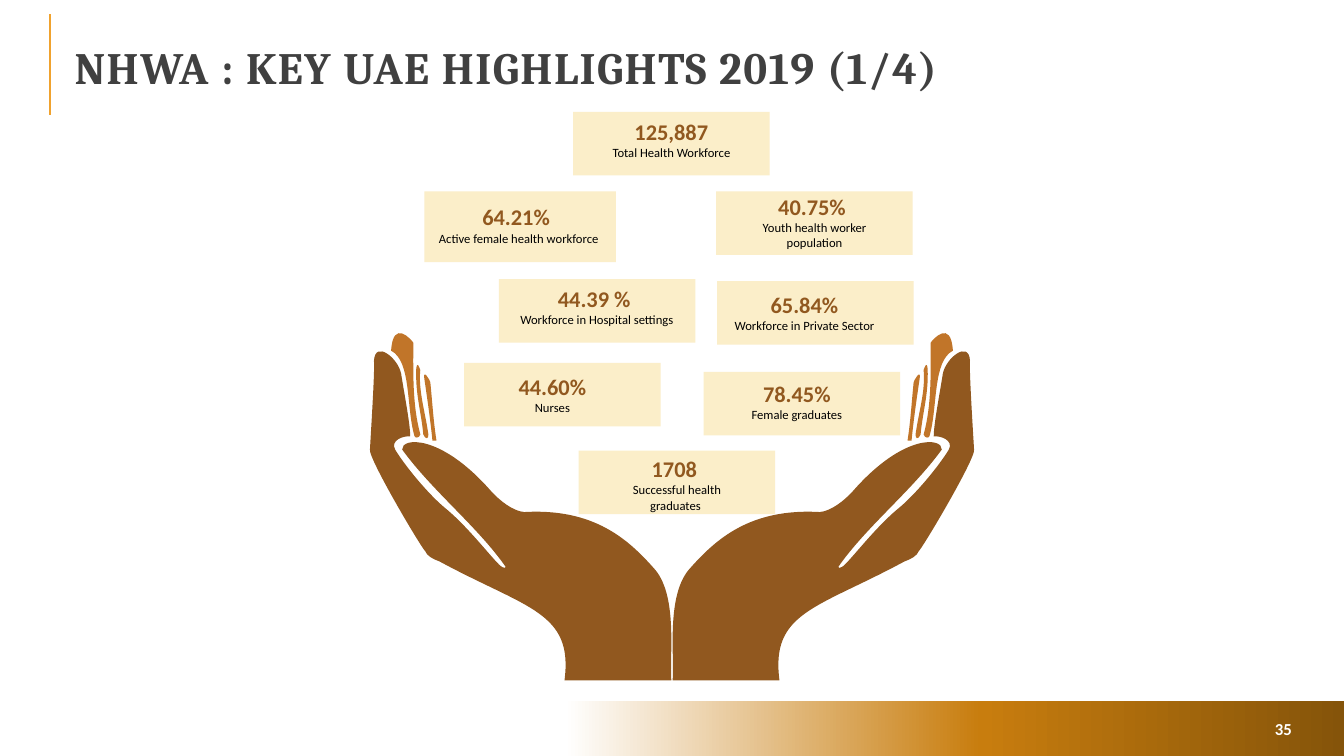
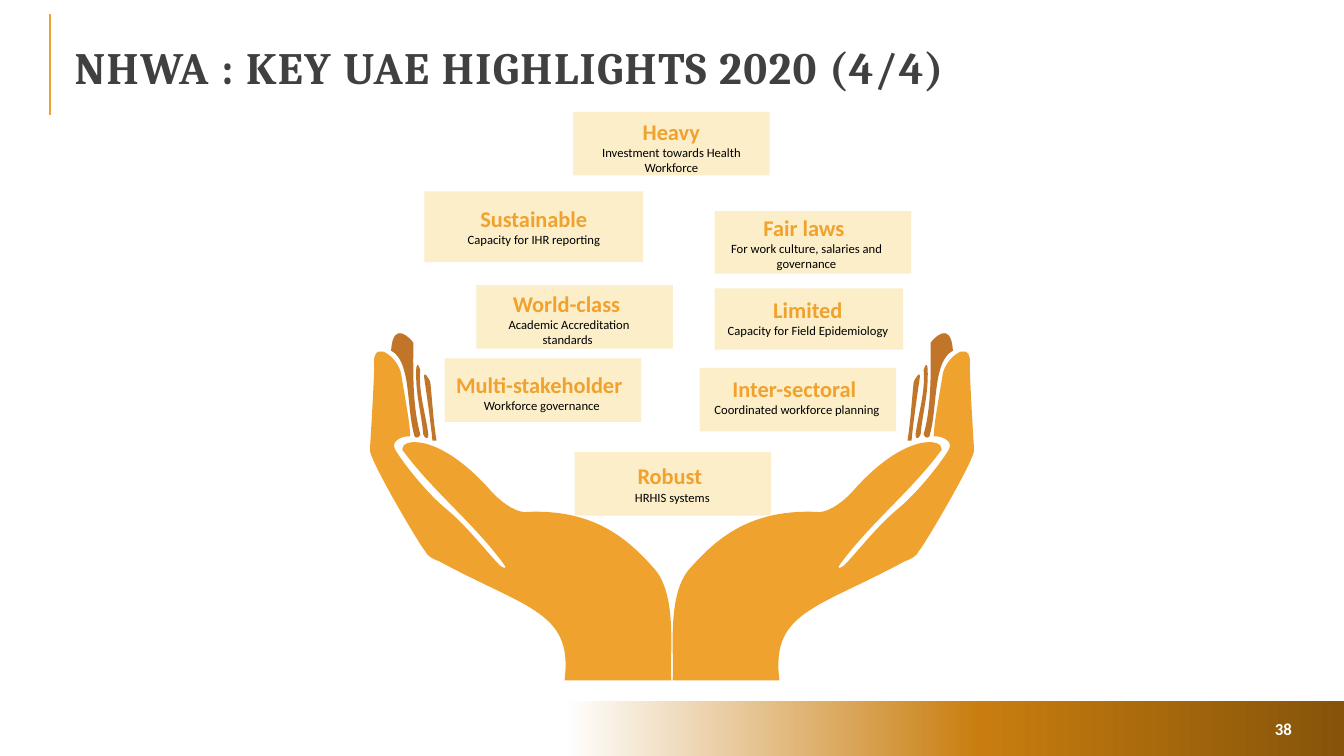
from copy import deepcopy
from dataclasses import dataclass

from lxml import etree
from pptx import Presentation
from pptx.dml.color import RGBColor
from pptx.enum.shapes import MSO_CONNECTOR, MSO_SHAPE
from pptx.enum.text import MSO_ANCHOR, MSO_AUTO_SIZE, PP_ALIGN
from pptx.oxml.ns import qn
from pptx.util import Emu, Inches, Pt

STRAIGHT = MSO_CONNECTOR.STRAIGHT
RECTANGLE = MSO_SHAPE.RECTANGLE
MIDDLE = MSO_ANCHOR.MIDDLE
TOP = MSO_ANCHOR.TOP
NO_AUTOFIT = MSO_AUTO_SIZE.NONE
LEFT, CENTER, RIGHT = PP_ALIGN.LEFT, PP_ALIGN.CENTER, PP_ALIGN.RIGHT

# The grid has square cells of a tenth of an inch
CELL = Inches(0.1)
COLUMNS, ROWS = 133.33, 75
MIRROR_AXIS = COLUMNS / 2
CURVE_STEPS = 16
TITLE_ONLY = 5

HEAD_FONT, BODY_FONT = "Cambria", "Calibri"
COLORS = {
    "amber": "F0A22E",
    "brown": "91581F",
    "finger": "C17529",
    "panel": "FBEEC9",
    "title": "404040",
    "black": "000000",
    "white": "FFFFFF",
    "band_middle": "C87D0E",
    "band_end": "85540A",
}
BAND_STOPS = [(0.42, "white"), (0.73, "band_middle"), (1.0, "band_end")]


@dataclass(frozen=True)
class Box:
    left: float
    top: float
    width: float
    height: float

    def emu(self) -> tuple:
        return tuple(cells(n) for n in (self.left, self.top, self.width, self.height))


@dataclass(frozen=True)
class Outline:
    """A start point, then curves (three points) and straight lines (one)."""
    start: tuple
    segments: list


@dataclass(frozen=True)
class Callout:
    value: str
    caption: str
    panel: Box
    text: Box


@dataclass(frozen=True)
class Page:
    title: str
    number: str
    accent: str
    callouts: list


TITLE_BOX = Box(6.4, 4.75, 106.3, 4.8)
NUMBER_BOX = Box(118.55, 70.8, 10.6, 3)
BAND_BOX = Box(0, 69.5, COLUMNS, 5.6)

# Left hand; the right one is its mirror image
PALM = Outline((42.2, 54.7), [
    ((41.7, 54.2), (36.5, 45.4), (36.7, 44.6)),
    ((36.8, 42.8), (37.2, 36.6), (37.1, 35.8)),
    ((37.2, 33.7), (39.5, 35.5), (39.8, 37.1)),
    ((40, 38.5), (40.7, 42), (40.7, 43.3)),
    ((40, 43.2), (38.7, 43.7), (39.2, 44.6)),
    ((40.1, 46.1), (42.5, 49.1), (44.4, 50.6)),
    ((46.5, 52.4), (48.5, 55), (49.5, 56)),
    ((50, 56.5), (50.4, 56.4), (50, 56)),
    ((47.2, 52.1), (42.8, 48.6), (39.9, 44.6)),
    ((39.8, 43.4), (43.7, 43), (48.7, 48.7)),
    ((49.6, 49.7), (50.9, 50.7), (52, 50.8)),
    ((58.9, 50.4), (62.3, 53.5), (64.8, 56.3)),
    ((67.3, 58.9), (66.4, 65), (66.6, 67.5)),
    ((56, 67.5),),
    ((56.9, 60.7), (52.3, 60.4), (43.6, 55.7)),
    ((43, 55.5), (42.3, 55.1), (42.2, 54.7)),
])
FINGERS = [
    Outline((38.8, 34.8), [
        ((39, 31.6), (40.8, 33.7), (41, 34)),
        ((41, 37), (40.9, 40.2), (41.7, 43.1)),
        ((41.6, 43.5), (41.1, 43.5), (41.1, 43.2)),
        ((40.3, 40.4), (40.8, 35.8), (38.8, 34.8)),
    ]),
    Outline((41.3, 36.6), [
        ((41.4, 35.7), (41.6, 36.5), (41.7, 36.7)),
        ((41.5, 38.8), (42.2, 40.9), (42.5, 43.1)),
        ((42.5, 43.5), (42.3, 43.7), (42, 43.1)),
        ((41.8, 40.9), (41.2, 39.1), (41.3, 36.6)),
    ]),
    Outline((42.1, 37.6), [
        ((41.9, 36.5), (42.7, 37.7), (42.7, 38)),
        ((42.9, 40), (43, 41.8), (43.3, 43.7)),
        ((42.9, 43.7),),
        ((42.7, 41.7), (42.4, 39.6), (42.1, 37.6)),
    ]),
]


def panel_at(left: float, top: float, width: float = 19.5, height: float = 6.3) -> Box:
    return Box(left, top, width, height)


def text_at(left: float, top: float, width: float = 17.2, height: float = 5.2) -> Box:
    return Box(left, top, width, height)


PAGES = [
    Page("NHWA : KEY UAE HIGHLIGHTS 2019 (1/4)", "35", "brown", [
        Callout("125,887", "Total Health Workforce", panel_at(56.85, 11.1), text_at(58, 11.2)),
        Callout("64.21% ", "Active female health workforce",
                panel_at(42.1, 19, 19, 7), text_at(41.7, 19.7, 19.5)),
        Callout("40.75% ", "Youth health worker population",
                panel_at(71.05, 19), text_at(72.2, 18.65, height=6.7)),
        Callout("44.39 % ", "Workforce in Hospital settings",
                panel_at(49.5, 27.7), text_at(50.6, 27.8, height=6.7)),
        Callout("65.84%", "Workforce in Private Sector",
                panel_at(71.15, 27.9), text_at(71.2, 28.4)),
        Callout("44.60%", "Nurses", panel_at(46.05, 36), text_at(47, 36.5, 15.6)),
        Callout("78.45%", "Female graduates",
                panel_at(69.8, 36.9), text_at(65.8, 37.25, 26.5, 5.6)),
        Callout("1708 ", "Successful health graduates ",
                panel_at(57.4, 44.7), text_at(60.8, 44.7, 12.7, 6.7)),
    ]),
    Page("NHWA : KEY UAE HIGHLIGHTS 2020 (4/4)", "38", "amber", [
        Callout("Heavy", "Investment towards Health Workforce",
                panel_at(56.85, 11.1), text_at(58, 11.2, height=6.7)),
        Callout("Sustainable", "Capacity for IHR reporting",
                panel_at(42.1, 19, 21.7, 7), text_at(44.35, 19.85)),
        Callout("Fair laws ", "For work culture, salaries and governance",
                panel_at(70.9, 20.95, 19.5, 6.2), text_at(71.4, 20.75, height=8.6)),
        Callout("World-class ", "Academic Accreditation standards ",
                panel_at(47.25, 28.3), text_at(47.7, 28.3, 17.5, 6.7)),
        Callout("Limited", "Capacity for Field Epidemiology",
                panel_at(70.9, 28.6, 18.7, 6.1), text_at(69.5, 28.85, 21.3)),
        Callout("Multi-stakeholder ", "Workforce governance",
                panel_at(44.1, 35.55), text_at(41.6, 36.3, 24.3)),
        Callout("Inter-sectoral ", "Coordinated workforce planning",
                panel_at(69.4, 36.5), text_at(69.8, 36.7, 18.5)),
        Callout("Robust ", "HRHIS systems", panel_at(57, 44.85), text_at(55.7, 45.4, 22)),
    ]),
]


def cells(count: float) -> Emu:
    return Emu(round(count * CELL))


def rgb(name: str) -> RGBColor:
    return RGBColor.from_string(COLORS[name])


# Text
def write_para(para, text: str, *, size: float, color: str, font: str = BODY_FONT,
               bold: bool = False, align=CENTER, tracking: int = 0) -> None:
    para.alignment = align
    span = para.add_run()
    span.text = text
    span.font.name, span.font.size, span.font.bold = font, Pt(size), bold
    span.font.color.rgb = rgb(color)
    if tracking:
        span.font._element.set("spc", str(tracking * 100))


def prepare_frame(shape, anchor):
    frame = shape.text_frame
    frame.word_wrap = True
    frame.auto_size = NO_AUTOFIT
    frame.vertical_anchor = anchor
    return frame


def add_text_box(slide, box: Box, anchor=TOP):
    return prepare_frame(slide.shapes.add_textbox(*box.emu()), anchor)


# Shapes
def finish_shape(shape, color: str) -> None:
    shape.shadow.inherit = False
    shape.line.fill.background()
    shape.fill.solid()
    shape.fill.fore_color.rgb = rgb(color)


def add_panel(slide, box: Box, color: str):
    panel = slide.shapes.add_shape(RECTANGLE, *box.emu())
    finish_shape(panel, color)
    return panel


def place(point: tuple, mirrored: bool) -> tuple:
    x, y = point
    return cells(2 * MIRROR_AXIS - x if mirrored else x), cells(y)


def curve_point(points: list, t: float) -> tuple:
    weights = ((1 - t) ** 3, 3 * t * (1 - t) ** 2, 3 * t * t * (1 - t), t ** 3)
    return tuple(sum(w * p[axis] for w, p in zip(weights, points)) for axis in (0, 1))


def trace(outline: Outline) -> list:
    """Sample the outline, so that the shape gets its true extents."""
    points = [outline.start]
    for segment in outline.segments:
        if len(segment) == 1:
            points += segment
        else:
            ends = [points[-1], *segment]
            points += [curve_point(ends, step / CURVE_STEPS)
                       for step in range(1, CURVE_STEPS + 1)]
    return points


def add_outline(slide, outline: Outline, color: str, mirrored: bool) -> None:
    points = [place(point, mirrored) for point in trace(outline)]
    builder = slide.shapes.build_freeform(*points[0])
    builder.add_line_segments(points[1:], close=True)
    shape = builder.convert_to_shape()
    finish_shape(shape, color)

    # Replace the sampled points by the curves themselves
    drawing = next(shape._element.iter(qn("a:path")))
    for command in list(drawing):
        drawing.remove(command)
    tags = {1: "a:lnTo", 3: "a:cubicBezTo"}
    commands = [("a:moveTo", (outline.start,))]
    commands += [(tags[len(segment)], segment) for segment in outline.segments]
    for tag, segment in commands:
        command = etree.SubElement(drawing, qn(tag))
        for point in segment:
            x, y = place(point, mirrored)
            etree.SubElement(command, qn("a:pt"), x=str(x - shape.left), y=str(y - shape.top))
    etree.SubElement(drawing, qn("a:close"))


def add_hands(slide, color: str) -> None:
    for mirrored in (False, True):
        add_outline(slide, PALM, color, mirrored)
        for finger in FINGERS:
            add_outline(slide, finger, "finger", mirrored)


# Parts shared by all slides
def add_frame(slide, page: Page) -> None:
    rule = slide.shapes.add_connector(STRAIGHT, cells(5), cells(11.4), cells(5), cells(1.4))
    rule.line.color.rgb = rgb("amber")
    rule.line.width = Pt(1.5)
    etree.SubElement(rule._element.spPr, qn("a:effectLst"))

    band = add_panel(slide, BAND_BOX, "white")
    band.fill.gradient()
    band.fill.gradient_angle = 0
    stop_list = band._element.spPr.find(qn("a:gradFill")).find(qn("a:gsLst"))
    stop_list.append(deepcopy(stop_list[-1]))
    for stop, (position, color) in zip(band.fill.gradient_stops, BAND_STOPS):
        stop.position = position
        stop.color.rgb = rgb(color)

    title = slide.shapes.title
    title.left, title.top, title.width, title.height = TITLE_BOX.emu()
    para = prepare_frame(title, MIDDLE).paragraphs[0]
    para.line_spacing = 0.8
    write_para(para, page.title, size=32, color="title", font=HEAD_FONT,
               bold=True, align=LEFT, tracking=1)

    number = add_text_box(slide, NUMBER_BOX, MIDDLE)
    write_para(number.paragraphs[0], page.number, size=12, color="white",
               bold=True, align=RIGHT)


def add_callout(slide, callout: Callout, accent: str) -> None:
    add_panel(slide, callout.panel, "panel")
    frame = add_text_box(slide, callout.text)
    write_para(frame.paragraphs[0], callout.value, size=16, color=accent, bold=True)
    write_para(frame.add_paragraph(), callout.caption, size=9, color="black")


def main() -> None:
    deck = Presentation()
    deck.slide_width, deck.slide_height = cells(COLUMNS), cells(ROWS)
    for page in PAGES:
        slide = deck.slides.add_slide(deck.slide_layouts[TITLE_ONLY])
        add_frame(slide, page)
        add_hands(slide, page.accent)
        for callout in page.callouts:
            add_callout(slide, callout, page.accent)
    deck.save("out.pptx")


if __name__ == "__main__":
    main()
